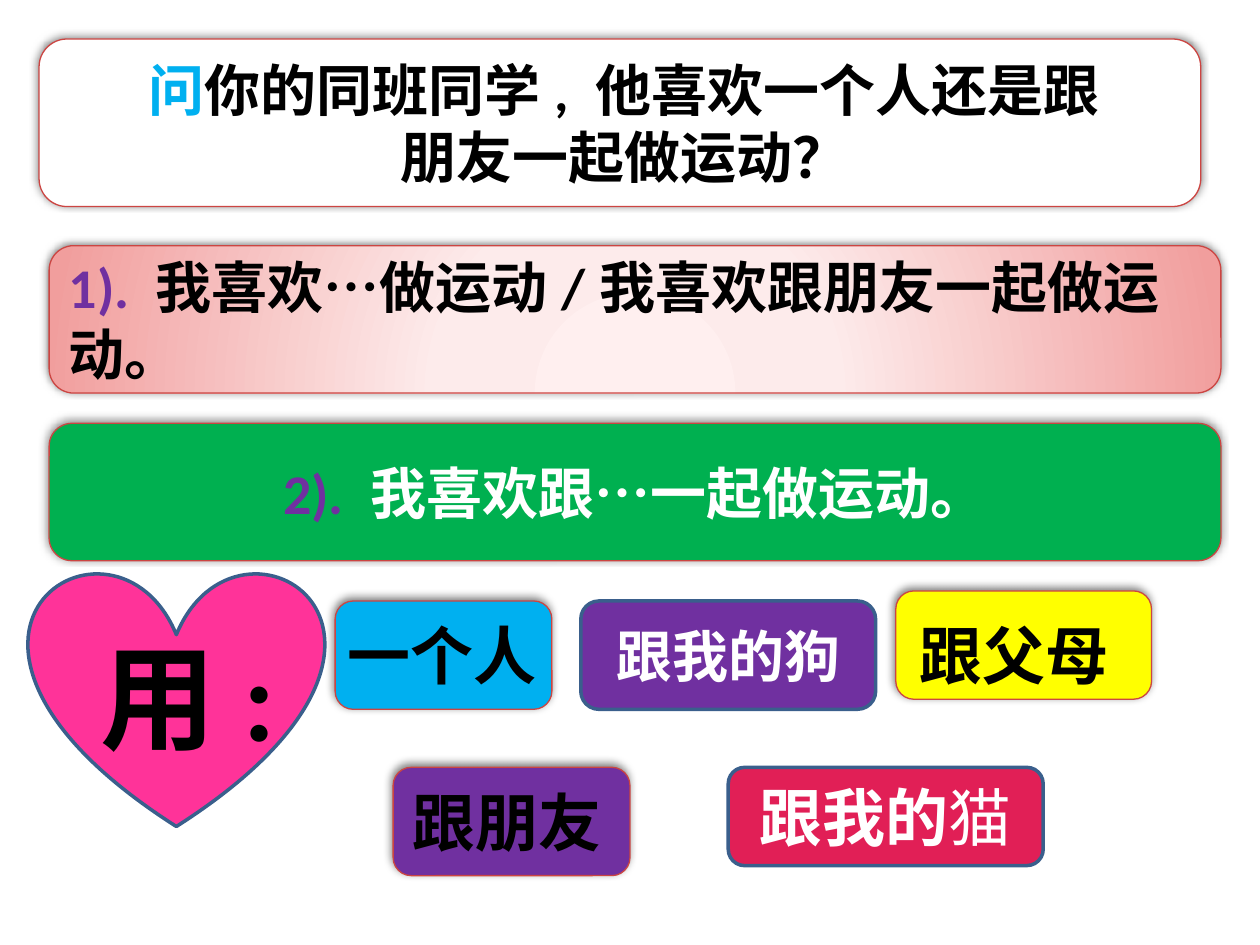
from lxml.etree import SubElement
from pptx import Presentation
from pptx.dml.color import RGBColor
from pptx.enum.shapes import MSO_SHAPE as Shape
from pptx.enum.text import MSO_ANCHOR as Anchor, MSO_AUTO_SIZE as AutoSize, PP_ALIGN as Align
from pptx.oxml import parse_xml
from pptx.oxml.ns import nsdecls, qn
from pptx.util import Inches, Pt

BLACK = RGBColor(0x00, 0x00, 0x00)
WHITE = RGBColor(0xFF, 0xFF, 0xFF)
SKY = RGBColor(0x00, 0xB0, 0xF0)
PURPLE = RGBColor(0x70, 0x30, 0xA0)
YELLOW = RGBColor(0xFF, 0xFF, 0x00)
GREEN = RGBColor(0x00, 0xB0, 0x50)
CRIMSON = RGBColor(0xE1, 0x1F, 0x56)
PINK = RGBColor(0xFF, 0x33, 0x99)
RED_LINE = RGBColor(0xCC, 0x45, 0x42)
BLUE_LINE = RGBColor(0x3A, 0x5F, 0x8C)
BLUSH_STOPS = [
    (0, RGBColor(0xFF, 0xEF, 0xEF)),
    (34, RGBColor(0xFD, 0xEB, 0xEB)),
    (100, RGBColor(0xF1, 0x9E, 0x9D)),
]


def add_panel(slide, place, fill, line=BLUE_LINE, width=2, kind=Shape.ROUNDED_RECTANGLE):
    """Add a filled and outlined shape without a shadow."""
    panel = slide.shapes.add_shape(kind, *map(Inches, place))
    panel.shadow.inherit = False
    panel.fill.solid()
    panel.fill.fore_color.rgb = fill
    panel.line.color.rgb = line
    panel.line.width = Pt(width)
    return panel


def add_raised_panel(slide, place, fill):
    """Add a thin red outlined panel with a soft shadow."""
    panel = add_panel(slide, place, fill, RED_LINE, 0.75)
    effects = panel._element.spPr.find(qn("a:effectLst"))
    shadow = SubElement(effects, qn("a:outerShdw"), blurRad=str(Pt(5)), dist=str(Pt(2)),
                        dir=str(245 * 60000), algn="ctr", rotWithShape="0")
    color = SubElement(shadow, qn("a:srgbClr"), val=str(BLACK))
    SubElement(color, qn("a:alpha"), val="50000")
    return panel


def set_radial_fill(panel, stops):
    """Replace the solid fill with a circular gradient centred below the panel."""
    marks = "".join(
        f'<a:gs pos="{position * 1000}"><a:srgbClr val="{color}"/></a:gs>'
        for position, color in stops
    )
    gradient = parse_xml(
        f'<a:gradFill {nsdecls("a")} rotWithShape="1"><a:gsLst>{marks}</a:gsLst>'
        '<a:path path="circle"><a:fillToRect l="50000" t="155000" r="50000" b="-55000"/>'
        '</a:path></a:gradFill>'
    )
    properties = panel._element.spPr
    properties.replace(properties.find(qn("a:solidFill")), gradient)


def write(shape, lines, size, align=Align.CENTER, anchor=Anchor.MIDDLE):
    """Write lines, each a list of (text, colour, bold) spans."""
    frame = shape.text_frame
    frame.word_wrap = True
    frame.vertical_anchor = anchor
    for index, spans in enumerate(lines):
        para = frame.paragraphs[0] if index == 0 else frame.add_paragraph()
        para.alignment = align
        for text, color, bold in spans:
            span = para.add_run()
            span.text = text
            span.font.name = "Calibri"
            span.font.size = Pt(size)
            span.font.bold = bold
            span.font.color.rgb = color


def add_label(slide, place, lines, size, align=Align.CENTER, wrap=True):
    """Add a text box that grows with its text."""
    box = slide.shapes.add_textbox(*map(Inches, place))
    write(box, lines, size, align, Anchor.TOP)
    box.text_frame.word_wrap = wrap
    box.text_frame.auto_size = AutoSize.SHAPE_TO_FIT_TEXT


def add_question(slide):
    """Add the question at the top."""
    add_raised_panel(slide, (0.31, 0.31, 9.22, 1.33), WHITE)
    add_label(slide, (0.62, 0.39, 8.67, 1.18), [
        [("问", SKY, True), ("你的同班同学, 他喜欢一个人还是跟", BLACK, True)],
        [("朋友一起做运动？", BLACK, True)],
    ], 32)


def add_patterns(slide):
    """Add the two numbered sentence patterns."""
    first = add_raised_panel(slide, (0.39, 1.95, 9.3, 1.17), WHITE)
    set_radial_fill(first, BLUSH_STOPS)
    write(first, [[("1). ", PURPLE, True),
                   ("我喜欢…做运动/我喜欢跟朋友一起做运动。", BLACK, True)]], 32, Align.LEFT)
    second = add_raised_panel(slide, (0.39, 3.36, 9.3, 1.09), GREEN)
    write(second, [[("2). ", PURPLE, True), ("我喜欢跟…一起做运动。", WHITE, True)]], 32)


def add_companions(slide):
    """Add the cards naming who to do sport with."""
    cards = [
        ("跟朋友", (3.12, 6.09, 1.88, 0.86), PURPLE, (2.97, 6.17, 2.11, 0.71), Align.CENTER, True),
        ("一个人", (2.66, 4.77, 1.72, 0.86), SKY, (2.66, 4.84, 1.72, 0.71), Align.LEFT, False),
        ("跟父母", (7.11, 4.69, 2.03, 0.86), YELLOW, (6.95, 4.84, 2.19, 0.71), Align.CENTER, True),
    ]
    for text, place, fill, label_place, align, wrap in cards:
        add_raised_panel(slide, place, fill)
        add_label(slide, label_place, [[(text, BLACK, True)]], 36, align, wrap)
    dog = add_panel(slide, (4.61, 4.77, 2.34, 0.86), PURPLE)
    write(dog, [[("跟我的狗", WHITE, True)]], 32)
    cat = add_panel(slide, (5.78, 6.09, 2.5, 0.78), CRIMSON)
    write(cat, [[("跟我的", WHITE, True), ("猫", WHITE, False)]], 36)


def add_heart(slide):
    """Add the heart that introduces the cards."""
    add_panel(slide, (0.23, 4.53, 2.34, 2.03), PINK, kind=Shape.HEART)
    add_label(slide, (0.7, 4.92, 1.41, 1.21), [[("用:", BLACK, True)]], 66, Align.LEFT)


def main():
    """Build and save the deck."""
    deck = Presentation()
    deck.slide_width, deck.slide_height = Inches(10), Inches(7.5)
    slide = deck.slides.add_slide(deck.slide_layouts[6])
    add_question(slide)
    add_patterns(slide)
    add_companions(slide)
    add_heart(slide)
    deck.save("out.pptx")


if __name__ == "__main__":
    main()
